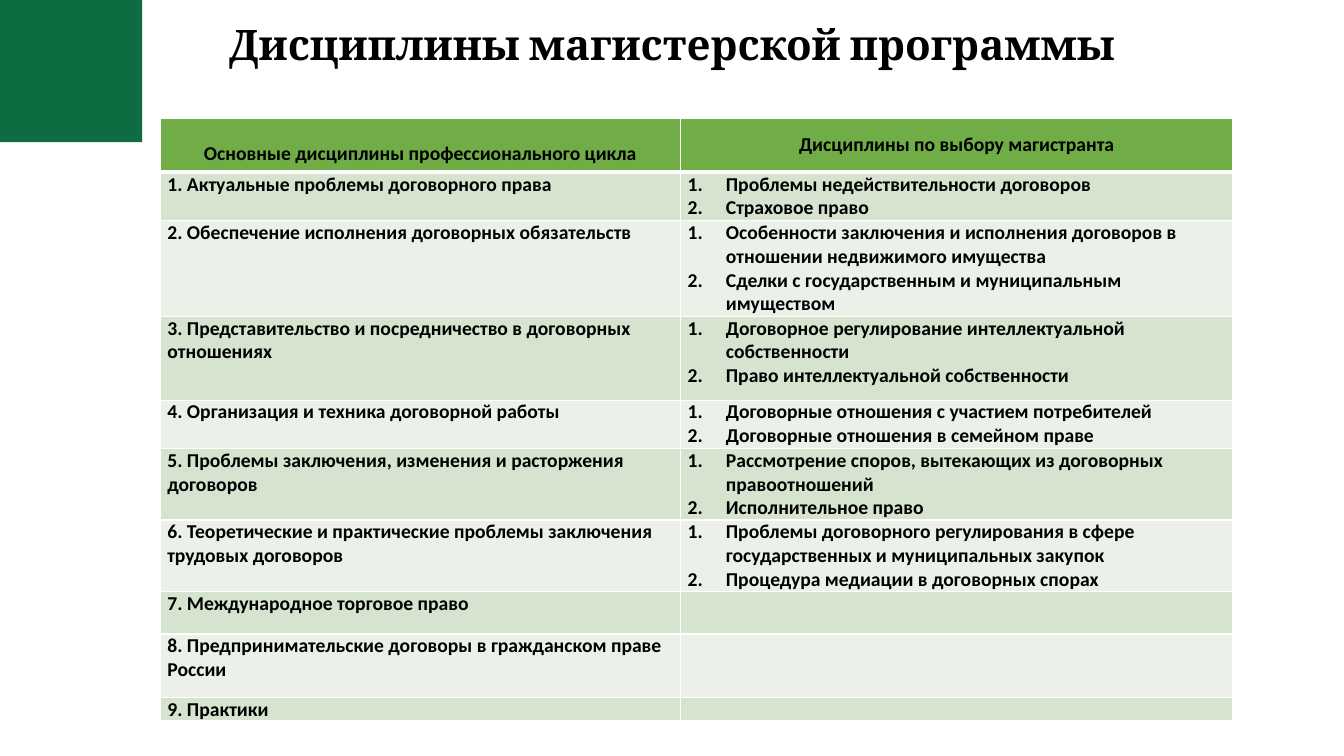
from lxml.etree import SubElement as Sub
from pptx import Presentation
from pptx.dml.color import RGBColor as Rgb
from pptx.enum.shapes import MSO_SHAPE as Kind
from pptx.enum.text import MSO_ANCHOR as Anchor, PP_ALIGN as Align
from pptx.oxml.ns import qn
from pptx.util import Emu, Pt

PX = 9144
HEADS = ["Основные дисциплины профессионального цикла", "Дисциплины по выбору магистранта"]
ROWS = [
    (48, "Актуальные проблемы договорного права",
     ["Проблемы недействительности договоров", "Страховое право"]),
    (95, "Обеспечение исполнения договорных обязательств",
     ["Особенности заключения и исполнения договоров в отношении недвижимого имущества",
      "Сделки с государственным и муниципальным имуществом"]),
    (83, "Представительство и посредничество в договорных отношениях",
     ["Договорное регулирование интеллектуальной собственности",
      "Право интеллектуальной собственности"]),
    (48, "Организация и техника договорной работы",
     ["Договорные отношения с участием потребителей", "Договорные отношения в семейном праве"]),
    (71, "Проблемы заключения, изменения и расторжения договоров",
     ["Рассмотрение споров, вытекающих из договорных правоотношений", "Исполнительное право"]),
    (71, "Теоретические и практические проблемы заключения трудовых договоров",
     ["Проблемы договорного регулирования в сфере государственных и муниципальных закупок",
      "Процедура медиации в договорных спорах"]),
    (42, "Международное торговое право", []),
    (63, "Предпринимательские договоры в гражданском праве России", []),
    (23, "Практики", []),
]


def px(*nums):
    """Turn px lengths into EMU."""
    return [Emu(n * PX) for n in nums]


def ink(code):
    """Make a colour from a hex string."""
    return Rgb.from_string(code)


def style(para, face, size):
    """Make the runs of a paragraph bold black in one face."""
    for run in para.runs:
        font = run.font
        font.name, font.size, font.bold = face, Pt(size), True
        font.color.rgb = ink("000000")


def title(slide, box, text):
    """Add the centred heading."""
    frame = slide.shapes.add_textbox(*px(*box)).text_frame
    frame.word_wrap = True
    frame.vertical_anchor = Anchor.MIDDLE
    frame.text = text
    para = frame.paragraphs[0]
    para.alignment, para.line_spacing = Align.CENTER, 0.9
    style(para, "Cambria", 30)


def block(slide, box, fill):
    """Add a plain filled rectangle."""
    shape = slide.shapes.add_shape(Kind.RECTANGLE, *px(*box))
    shape.shadow.inherit = False
    shape.fill.solid()
    shape.fill.fore_color.rgb = ink(fill)
    shape.line.fill.background()


def edge(cell, top, low):
    """Draw white cell borders with given top and bottom widths."""
    props = cell._tc.get_or_add_tcPr()
    for side, width in zip("LRTB", (1, 1, top, low)):
        line = Sub(props, qn(f"a:ln{side}"), w=str(Pt(width)))
        Sub(Sub(line, qn("a:solidFill")), qn("a:srgbClr"), val="FFFFFF")


def count(para):
    """Number a paragraph with a hanging indent."""
    props = para._p.get_or_add_pPr()
    dent = 38 * PX
    props.set("marL", str(dent))
    props.set("indent", str(-dent))
    Sub(props, qn("a:buFont"), typeface="+mj-lt")
    Sub(props, qn("a:buAutoNum"), type="arabicPeriod")


def put(cell, lines, fill, top=1, low=1):
    """Fill a cell with text, colour and borders."""
    edge(cell, top, low)
    cell.fill.solid()
    cell.fill.fore_color.rgb = ink(fill)
    cell.margin_left, cell.margin_right = px(7, 7)
    cell.margin_top = cell.margin_bottom = 0
    cell.text_frame.text = "\n".join(lines)
    for para in cell.text_frame.paragraphs:
        style(para, "Calibri", 14)
        if not para.runs:
            Sub(para._p, qn("a:endParaRPr"), sz="1400")


def grid(slide, left, top, cols):
    """Add the table of disciplines."""
    highs = [54] + [row[0] for row in ROWS]
    box = px(left, top, sum(cols), sum(highs))
    table = slide.shapes.add_table(len(highs), len(cols), *box).table
    for col, wide in zip(table.columns, px(*cols)):
        col.width = wide
    for row, high in zip(table.rows, px(*highs)):
        row.height = high
    for i, head in enumerate(HEADS):
        cell = table.cell(0, i)
        put(cell, [head], "70AD47", low=3)
        cell.text_frame.paragraphs[0].alignment = Align.CENTER
    table.cell(0, 0).margin_top = px(24)[0]
    table.cell(0, 1).vertical_anchor = Anchor.MIDDLE
    for i, (_, main_text, picks) in enumerate(ROWS, 1):
        fill = "D5E3CF" if i % 2 else "EBF1E9"
        rim = 3 if i == 1 else 1
        put(table.cell(i, 0), [f"{i}. {main_text}"], fill, rim)
        cell = table.cell(i, 1)
        put(cell, picks, fill, rim)
        if picks:
            for para in cell.text_frame.paragraphs:
                count(para)


def main():
    """Build and save the slide."""
    deck = Presentation()
    deck.slide_width, deck.slide_height = px(1333, 750)
    slide = deck.slides.add_slide(deck.slide_layouts[6])
    title(slide, (92, 14, 1150, 65), "Дисциплины магистерской программы")
    grid(slide, 159, 117, (516, 548))
    block(slide, (0, 0, 141, 141), "0E6C41")
    deck.save("out.pptx")


if __name__ == "__main__":
    main()
